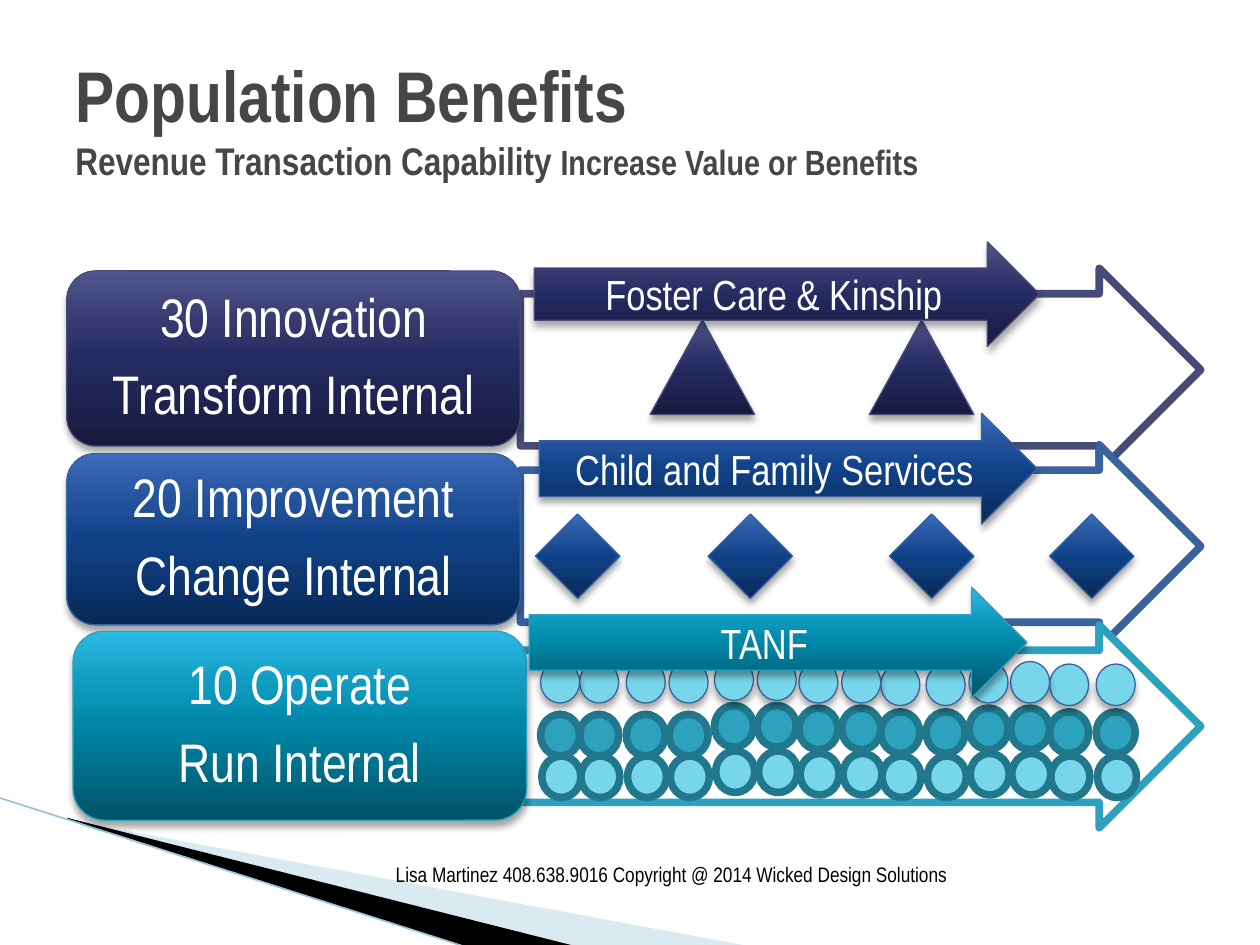
from dataclasses import dataclass

from lxml.etree import SubElement
from pptx import Presentation
from pptx.dml.color import RGBColor
from pptx.enum.shapes import MSO_CONNECTOR, MSO_SHAPE
from pptx.enum.text import MSO_ANCHOR, PP_ALIGN
from pptx.oxml.ns import qn
from pptx.util import Inches, Pt

FONT = "Arial Narrow"
WHITE = "FFFFFF"
CIRCLE_LIGHT, CIRCLE_MEDIUM, CIRCLE_RIM = "78D6EA", "2DA2BF", "21788D"
THICK, THIN = 4.33, 0.75


@dataclass(frozen=True)
class Palette:
    line: str
    stops: tuple[str, str, str, str]


@dataclass(frozen=True)
class Box:
    left: float
    top: float
    width: float
    height: float

    def lengths(self) -> list:
        return [Inches(v) for v in (self.left, self.top, self.width, self.height)]


@dataclass(frozen=True)
class Level:
    palette: Palette
    outline_top: float
    label_box: Box
    lines: tuple[str, str]
    program_box: Box
    program: str


@dataclass(frozen=True)
class CircleRow:
    fill: str
    line: str
    line_width: float
    shift: float
    tops: dict[str, float]
    shadow: bool = False


PURPLE = Palette("474B78", ("171A3D", "262B61", "353970", "51568D"))
BLUE = Palette("39639D", ("072956", "104288", "205199", "3D6BB9"))
TEAL = Palette("2DA2BF", ("005367", "0086A7", "0E9ABE", "2CB9E3"))

LEVELS = [
    Level(PURPLE, 2.13, Box(0.53, 2.15, 3.6, 1.39), ("30 Innovation", "Transform Internal"),
          Box(4.24, 1.92, 4.01, 0.83), "Foster Care & Kinship"),
    Level(BLUE, 3.53, Box(0.53, 3.6, 3.6, 1.36), ("20 Improvement", "Change Internal"),
          Box(4.28, 3.28, 3.95, 0.88), "Child and Family Services"),
    Level(TEAL, 4.96, Box(0.58, 5.01, 3.6, 1.5), ("10 Operate", "Run Internal"),
          Box(4.2, 4.66, 3.95, 0.88), "TANF"),
]

# Each circle column has a left edge and a height class
COLUMN_GROUPS = [
    [(4.97, "start"), (4.6, "start"), (4.29, "start")],
    [(7.35, "low"), (6.99, "low"), (6.68, "middle"), (6.34, "middle"),
     (6.01, "high"), (5.67, "high"), (5.31, "start")],
    [(8.7, "low"), (8.33, "low"), (8.02, "middle"), (7.69, "middle")],
]
CIRCLE_ROWS = [
    CircleRow(CIRCLE_MEDIUM, CIRCLE_RIM, THICK, 0,
              {"start": 5.67, "high": 5.6, "middle": 5.62, "low": 5.65}),
    CircleRow(CIRCLE_LIGHT, BLUE.line, THIN, 0,
              {"start": 5.25, "high": 5.23, "middle": 5.25, "low": 5.27}, shadow=True),
    CircleRow(CIRCLE_LIGHT, CIRCLE_RIM, THICK, 0.01,
              {"start": 6, "high": 5.96, "middle": 5.98, "low": 6}),
]


def color(value: str) -> RGBColor:
    return RGBColor.from_string(value)


def add_color(parent, value: str, alpha: int = 100) -> None:
    element = SubElement(parent, qn("a:srgbClr"), val=value)
    if alpha < 100:
        SubElement(element, qn("a:alpha"), val=str(alpha * 1000))


def add_shadow(shape) -> None:
    effects = shape._element.spPr.find(qn("a:effectLst"))
    shadow = SubElement(effects, qn("a:outerShdw"), blurRad=str(Pt(4)), dist=str(Pt(3)),
                        dir="5400000", rotWithShape="0")
    add_color(shadow, "000000", 35)


def add_solid(slide, kind, box: Box, fill: str, line: str, line_width: float):
    shape = slide.shapes.add_shape(kind, *box.lengths())
    shape.shadow.inherit = False
    shape.fill.solid()
    shape.fill.fore_color.rgb = color(fill)
    shape.line.color.rgb = color(line)
    shape.line.width = Pt(line_width)
    return shape


def add_glossy(slide, kind, box: Box, palette: Palette):
    shape = add_solid(slide, kind, box, palette.stops[0], palette.line, THIN)
    shape.fill.gradient()
    shape.fill.gradient_angle = 90
    stop_list = shape._element.spPr.find(qn("a:gradFill")).find(qn("a:gsLst"))
    stop_list.clear()
    for position, stop in zip((0, 50, 70, 100), palette.stops):
        add_color(SubElement(stop_list, qn("a:gs"), pos=str(position * 1000)), stop)
    add_shadow(shape)
    return shape


def write(shape, lines: tuple, size: float, font_color: str) -> None:
    frame = shape.text_frame
    frame.word_wrap = True
    frame.vertical_anchor = MSO_ANCHOR.MIDDLE
    frame.text = "\n".join(lines)
    for paragraph in frame.paragraphs:
        paragraph.alignment = PP_ALIGN.CENTER
        for run in paragraph.runs:
            run.font.name = FONT
            run.font.size = Pt(size)
            run.font.color.rgb = color(font_color)


def add_polygon(slide, points: list, fill: str, alpha: int = 100) -> None:
    corners = [(Inches(x), Inches(y)) for x, y in points]
    builder = slide.shapes.build_freeform(*corners[0])
    builder.add_line_segments(corners[1:])
    shape = builder.convert_to_shape()
    shape.shadow.inherit = False
    shape.fill.solid()
    shape.fill.fore_color.rgb = color(fill)
    shape.line.fill.background()
    if alpha < 100:
        fill_color = shape._element.spPr.find(qn("a:solidFill"))[0]
        SubElement(fill_color, qn("a:alpha"), val=str(alpha * 1000))


def add_level(slide, level: Level) -> None:
    add_solid(slide, MSO_SHAPE.RIGHT_ARROW, Box(4.13, level.outline_top, 5.4, 1.61),
              WHITE, level.palette.line, THICK).adjustments[0] = 0.75
    label = add_glossy(slide, MSO_SHAPE.ROUNDED_RECTANGLE, level.label_box, level.palette)
    write(label, level.lines, 31, WHITE)
    for paragraph in label.text_frame.paragraphs:
        paragraph.line_spacing = 0.9
        paragraph.space_after = Pt(11)


def add_title(slide) -> None:
    title = slide.shapes.add_textbox(*Box(0.5, 0.3, 9, 1.25).lengths())
    frame = title.text_frame
    frame.word_wrap = True
    frame.vertical_anchor = MSO_ANCHOR.MIDDLE
    paragraph = frame.paragraphs[0]
    parts = [("Population Benefits", 41), ("Revenue Transaction Capability ", 22),
             ("Increase Value or Benefits", 20)]
    for index, (text, size) in enumerate(parts):
        if index == 1:
            paragraph.add_line_break()
        run = paragraph.add_run()
        run.text = text
        run.font.name = FONT
        run.font.size = Pt(size)
        run.font.bold = True
        run.font.color.rgb = color("464646")


def main() -> None:
    presentation = Presentation()
    presentation.slide_width, presentation.slide_height = Inches(10), Inches(7.5)
    slide = presentation.slides.add_slide(presentation.slide_layouts[6])

    # Corner decoration
    add_polygon(slide, [(0.55, 6.51), (5.95, 7.51), (4.56, 7.51), (0.55, 6.5)], "A0CBDC", 40)
    add_polygon(slide, [(0.53, 6.49), (4.57, 7.51), (3.72, 7.52), (0.54, 6.5)], "000000")
    edge = slide.shapes.add_connector(MSO_CONNECTOR.STRAIGHT, Inches(-0.01), Inches(6.33),
                                      Inches(3.71), Inches(7.52))
    edge.line.color.rgb = color("97C5D8")
    edge.line.width = Pt(0.95)
    SubElement(edge._element.spPr, qn("a:effectLst"))

    # Three levels with their outlined arrows, then the title
    for level in LEVELS:
        add_level(slide, level)
    add_title(slide)

    # Markers: triangles, diamonds and circles
    for left in (5.16, 6.9):
        add_glossy(slide, MSO_SHAPE.ISOSCELES_TRIANGLE, Box(left, 2.54, 0.83, 0.75), PURPLE)
    for left in (4.25, 5.62, 7.06, 8.33):
        add_glossy(slide, MSO_SHAPE.DIAMOND, Box(left, 4.08, 0.67, 0.67), BLUE)
    for columns in COLUMN_GROUPS:
        for row in CIRCLE_ROWS:
            for left, height_class in columns:
                box = Box(left + row.shift, row.tops[height_class], 0.31, 0.33)
                circle = add_solid(slide, MSO_SHAPE.OVAL, box, row.fill, row.line, row.line_width)
                if row.shadow:
                    add_shadow(circle)

    # Program arrows, bottom one first
    for level in reversed(LEVELS):
        arrow = add_glossy(slide, MSO_SHAPE.RIGHT_ARROW, level.program_box, level.palette)
        write(arrow, (level.program,), 24, WHITE)

    # Footer
    footer = slide.shapes.add_textbox(*Box(2.83, 6.79, 5, 0.3).lengths())
    write(footer, ("Lisa Martinez 408.638.9016 Copyright @ 2014 Wicked Design Solutions",), 12, "000000")

    presentation.save("out.pptx")


if __name__ == "__main__":
    main()
